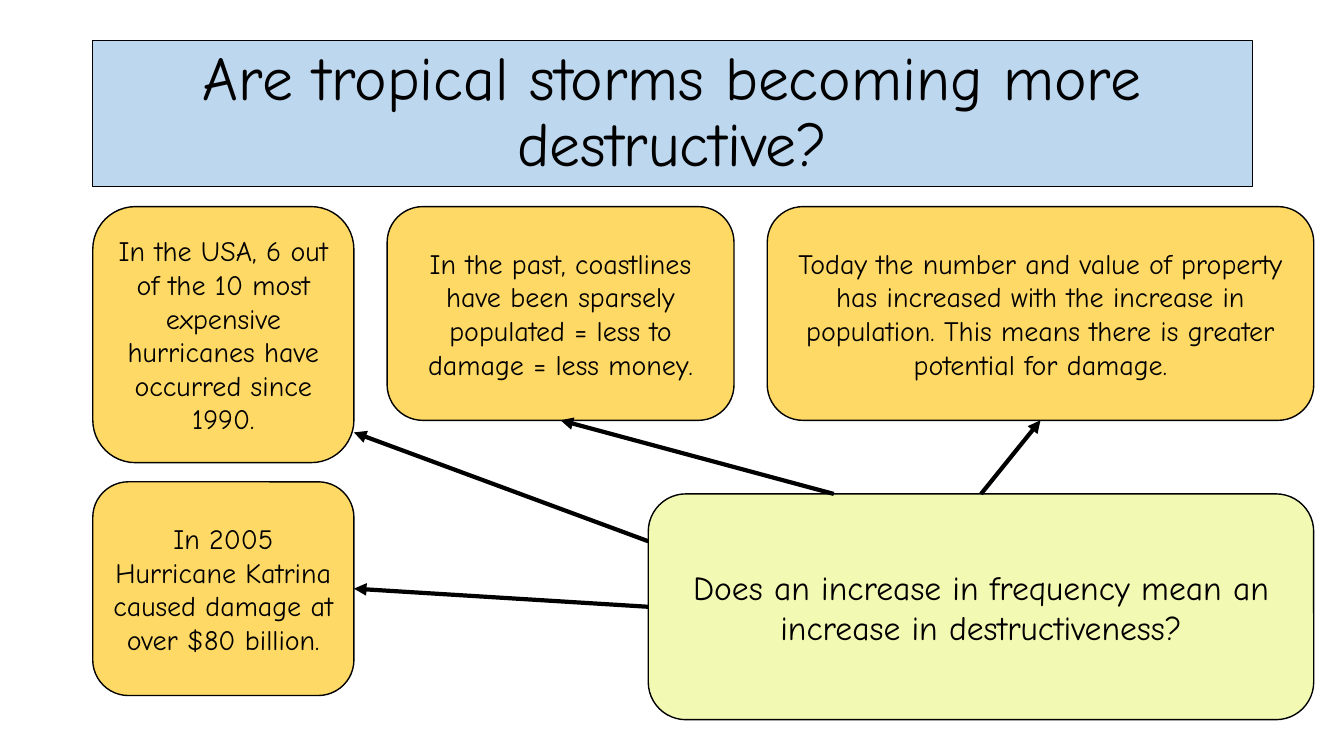
import pptx
import pptx.util
import pptx.dml.color
import pptx.enum.shapes
import pptx.enum.text
import pptx.oxml

PX = 9144
HUES = {"ink": "000000", "sky": "BDD7EE", "gold": "FFD966", "lime": "F2F9B3"}
FRAME = {
    "word_wrap": True,
    "auto_size": pptx.enum.text.MSO_AUTO_SIZE.NONE,
    "vertical_anchor": pptx.enum.text.MSO_ANCHOR.MIDDLE,
}


def tint(name):
    return pptx.dml.color.RGBColor.from_string(HUES[name])


def dress(shape, text, hue, size, edge, lead):
    shape.fill.solid()
    shape.fill.fore_color.rgb = tint(hue)
    shape.line.color.rgb = tint("ink")
    shape.line.width = pptx.util.Pt(edge)
    shape.shadow.inherit = False
    frame = shape.text_frame
    frame.text = text
    para = frame.paragraphs[0]
    font = para.runs[0].font
    looks = [
        (frame, FRAME),
        (para, {"alignment": pptx.enum.text.PP_ALIGN.CENTER, "line_spacing": lead}),
        (font, {"name": "Comic Neue", "size": pptx.util.Pt(size)}),
    ]
    for part, look in looks:
        for key, value in look.items():
            setattr(part, key, value)
    font.color.rgb = tint("ink")


deck = pptx.Presentation()
deck.slide_width, deck.slide_height = 1333 * PX, 750 * PX
slide = deck.slides.add_slide(deck.slide_layouts[5])

title = slide.shapes.title
place = {"left": 92, "top": 40, "width": 1150, "height": 145}
for key, value in place.items():
    setattr(title, key, value * PX)
dress(title, "Are tropical storms becoming more destructive?", "sky", 44, 0.75, 0.9)

cards = [
    (643, 490, 660, 224, "lime", 24,
     "Does an increase in frequency mean an increase in destructiveness?"),
    (92, 205, 259, 254, "gold", 20,
     "In the USA, 6 out of the 10 most expensive hurricanes have occurred since 1990."),
    (92, 478, 259, 212, "gold", 20,
     "In 2005 Hurricane Katrina caused damage at over $80 billion."),
    (384, 205, 344, 212, "gold", 20,
     "In the past, coastlines have been sparsely populated = less to damage = less money."),
    (761, 205, 542, 212, "gold", 20,
     "Today the number and value of property has increased with the increase in "
     "population. This means there is greater potential for damage."),
]
for left, top, width, height, hue, size, text in cards:
    card = slide.shapes.add_shape(
        pptx.enum.shapes.MSO_SHAPE.ROUNDED_RECTANGLE,
        left * PX, top * PX, width * PX, height * PX)
    dress(card, text, hue, size, 1, 1.0)

arrows = [
    (643, 602, 351, 584),
    (643, 537, 351, 429),
    (827, 490, 556, 417),
    (973, 490, 1032, 417),
]
for ends in arrows:
    arrow = slide.shapes.add_connector(
        pptx.enum.shapes.MSO_CONNECTOR.STRAIGHT, *[end * PX for end in ends])
    arrow.line.color.rgb = tint("ink")
    arrow.line.width = pptx.util.Pt(3)
    tip = pptx.oxml.parse_xml(
        '<a:tailEnd xmlns:a="http://schemas.openxmlformats.org/drawingml/2006/main" type="triangle"/>')
    arrow.line._get_or_add_ln().append(tip)
    flat = pptx.oxml.parse_xml(
        '<a:effectLst xmlns:a="http://schemas.openxmlformats.org/drawingml/2006/main"/>')
    arrow._element.spPr.append(flat)

deck.save("out.pptx")
